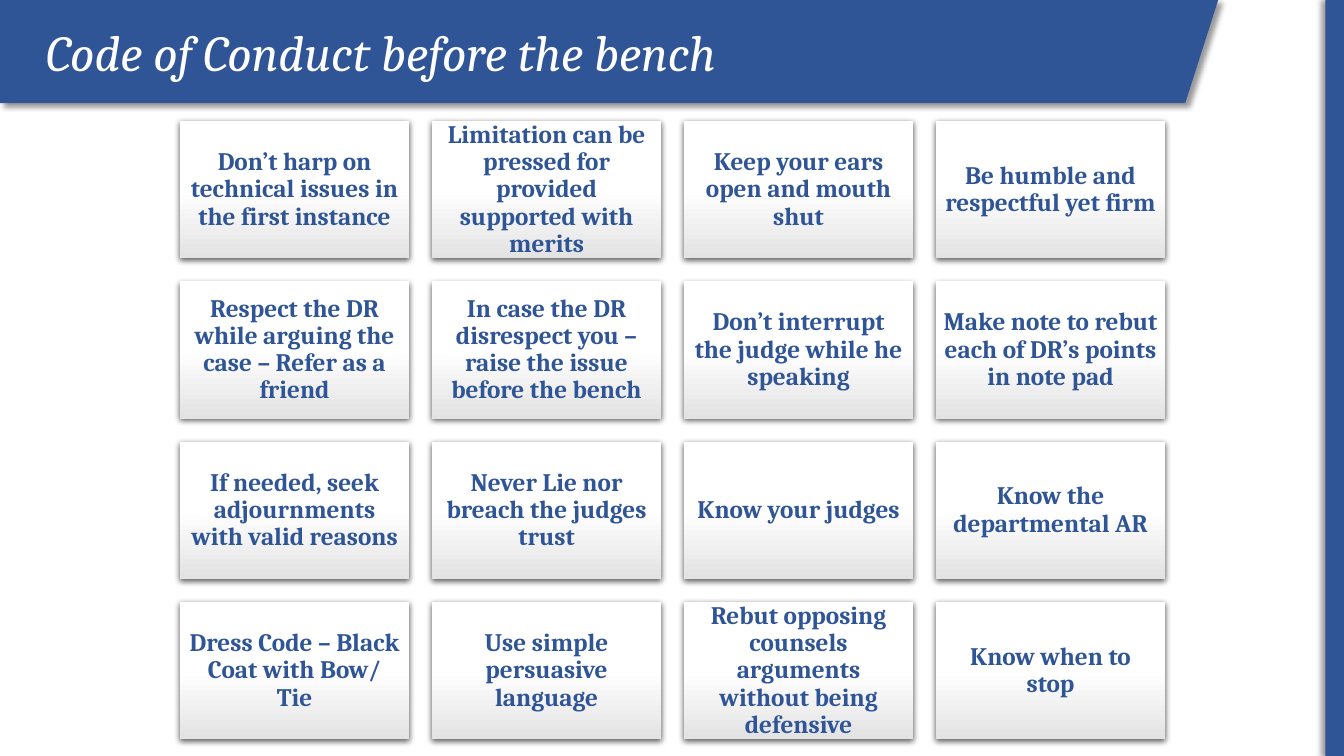
from copy import deepcopy

from lxml import etree
from pptx import Presentation
from pptx.dml.color import RGBColor
from pptx.enum.shapes import MSO_SHAPE
from pptx.enum.text import MSO_ANCHOR, MSO_AUTO_SIZE, PP_ALIGN
from pptx.oxml.ns import qn
from pptx.util import Cm, Pt

RECTANGLE = MSO_SHAPE.RECTANGLE
MIDDLE = MSO_ANCHOR.MIDDLE
GROW = MSO_AUTO_SIZE.SHAPE_TO_FIT_TEXT
CENTER = PP_ALIGN.CENTER

FONT = "Cambria"
COLORS = {"blue": "2F5597", "white": "FFFFFF", "grey": "E3E3E3", "shadow": "000000"}

SLIDE_WIDTH, SLIDE_HEIGHT = 33.87, 19.05
COLUMNS = 4
CARD_LEFT, CARD_TOP = 4.54, 3.05
CARD_WIDTH, CARD_HEIGHT = 5.77, 3.46
COLUMN_STEP, ROW_STEP = 6.35, 4.04

RULES = [
    "Don’t harp on technical issues in the first instance",
    "Limitation can be pressed for provided supported with merits",
    "Keep your ears open and mouth shut",
    "Be humble and respectful yet firm",
    "Respect the DR while arguing the case – Refer as a friend",
    "In case the DR disrespect you – raise the issue before the bench",
    "Don’t interrupt the judge while he speaking",
    "Make note to rebut each of DR’s points in note pad",
    "If needed, seek adjournments with valid reasons",
    "Never Lie nor breach the judges trust",
    "Know your judges",
    "Know the departmental AR",
    "Dress Code – Black Coat with Bow/ Tie",
    "Use simple persuasive language",
    "Rebut opposing counsels arguments without being defensive",
    "Know when to stop",
]


def color(name):
    return RGBColor.from_string(COLORS[name])


def cast_shadow(shape, opacity, blur, distance, angle):
    """Give the shape an outer shadow; blur and distance are in points."""
    shape.shadow.inherit = False
    effects = shape._element.spPr.find(qn("a:effectLst"))
    shadow = etree.SubElement(
        effects, qn("a:outerShdw"), blurRad=str(Pt(blur)), dist=str(Pt(distance)),
        dir=str(angle * 60000), algn="ctr", rotWithShape="0")
    tone = etree.SubElement(shadow, qn("a:srgbClr"), val=COLORS["shadow"])
    etree.SubElement(tone, qn("a:alpha"), val=str(opacity * 1000))


def fill_blue(shape):
    shape.fill.solid()
    shape.fill.fore_color.rgb = color("blue")
    shape.line.fill.background()


def fill_fading(shape):
    """Fill white down to the middle, then fading to grey at the bottom."""
    shape.fill.gradient()
    shape.fill.gradient_angle = 270
    stop_list = shape._element.spPr.find(qn("a:gradFill")).find(qn("a:gsLst"))
    stop_list.insert(1, deepcopy(stop_list[0]))
    stops = [(0, "white"), (0.5, "white"), (1, "grey")]
    for stop, (position, name) in zip(shape.fill.gradient_stops, stops):
        stop.position = position
        stop.color.rgb = color(name)
    shape.line.fill.background()


def set_font(para, size, name):
    para.font.name = FONT
    para.font.size = Pt(size)
    para.font.color.rgb = color(name)


def add_banner(page):
    builder = page.shapes.build_freeform(Cm(0), Cm(0))
    corners = [(30.71, -0.03), (29.87, 2.6), (0, 2.6)]
    builder.add_line_segments([(Cm(x), Cm(y)) for x, y in corners])
    banner = builder.convert_to_shape()
    fill_blue(banner)
    cast_shadow(banner, 40, 4, 3, 45)


def add_title(page, text):
    box = page.shapes.add_textbox(Cm(0.91), Cm(0.41), Cm(29.08), Cm(1.8))
    box.text_frame.word_wrap = True
    box.text_frame.auto_size = GROW
    para = box.text_frame.paragraphs[0]
    para.text = text
    set_font(para, 36, "white")
    para.font.italic = True


def add_side_bar(page):
    bar = page.shapes.add_shape(RECTANGLE, Cm(33.4), Cm(0), Cm(0.47), Cm(SLIDE_HEIGHT))
    fill_blue(bar)
    cast_shadow(bar, 40, 4, 3, 180)


def add_card(page, left, top, text):
    card = page.shapes.add_shape(
        RECTANGLE, Cm(left), Cm(top), Cm(CARD_WIDTH), Cm(CARD_HEIGHT))
    fill_fading(card)
    cast_shadow(card, 63, 4.5, 1.5, 90)
    frame = card.text_frame
    frame.word_wrap = True
    frame.vertical_anchor = MIDDLE
    frame.margin_left = frame.margin_right = Cm(0.19)
    frame.margin_top = frame.margin_bottom = Cm(0.19)
    para = frame.paragraphs[0]
    para.text = text
    para.alignment = CENTER
    para.line_spacing = 0.9
    set_font(para, 18, "blue")
    para.font.bold = True


def main():
    deck = Presentation()
    deck.slide_width, deck.slide_height = Cm(SLIDE_WIDTH), Cm(SLIDE_HEIGHT)
    page = deck.slides.add_slide(deck.slide_layouts[6])
    add_banner(page)
    add_title(page, "Code of Conduct before the bench")
    add_side_bar(page)
    for index, rule in enumerate(RULES):
        row, column = divmod(index, COLUMNS)
        add_card(page, CARD_LEFT + column * COLUMN_STEP, CARD_TOP + row * ROW_STEP, rule)
    deck.save("out.pptx")


if __name__ == "__main__":
    main()
